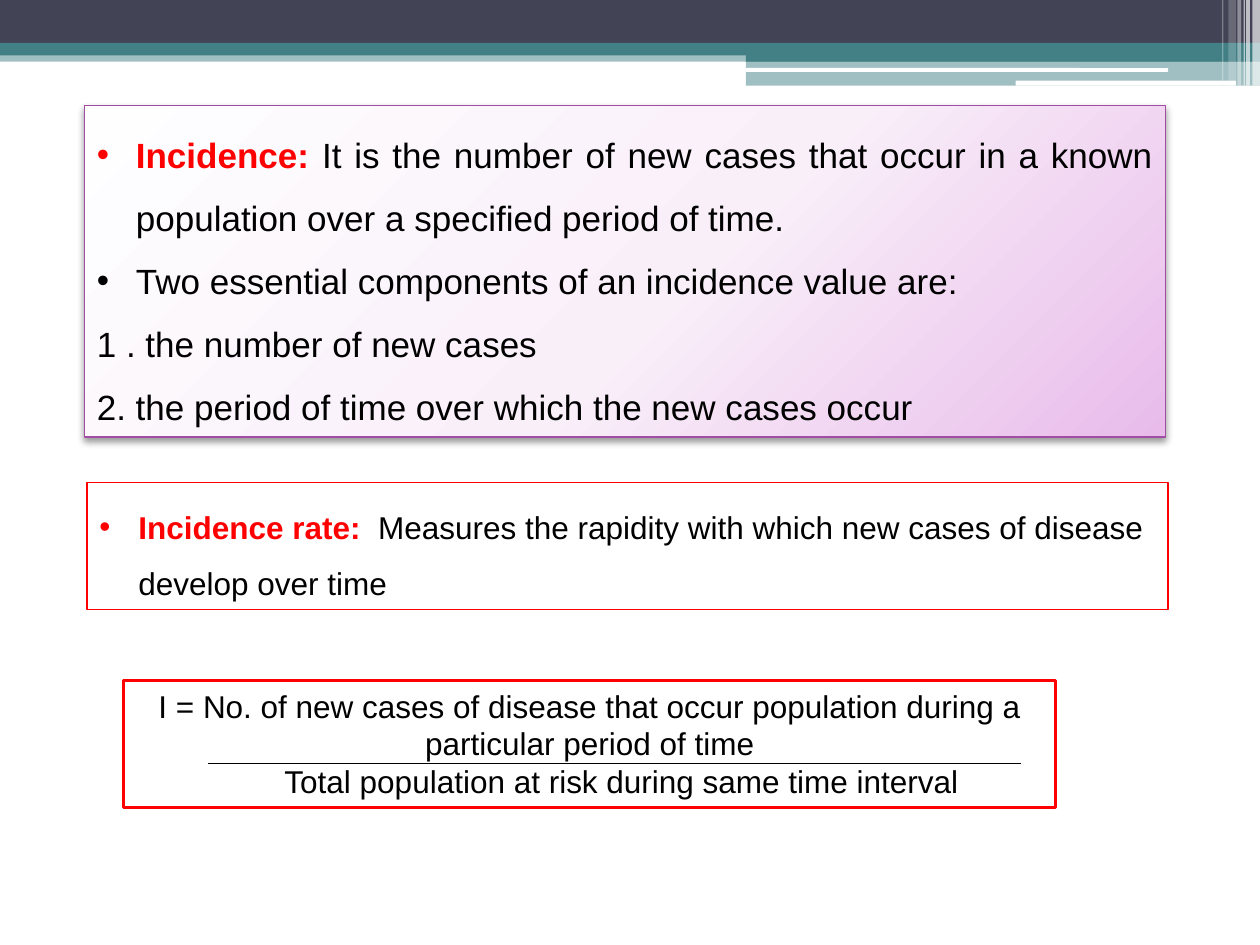
from dataclasses import dataclass

from lxml import etree
from pptx import Presentation
from pptx.dml.color import RGBColor
from pptx.enum.shapes import MSO_CONNECTOR, MSO_SHAPE
from pptx.enum.text import MSO_ANCHOR, MSO_AUTO_SIZE, PP_ALIGN
from pptx.oxml import parse_xml
from pptx.oxml.ns import qn
from pptx.util import Emu, Inches, Pt

RECTANGLE, ROUNDED = MSO_SHAPE.RECTANGLE, MSO_SHAPE.ROUNDED_RECTANGLE
LEFT, CENTER, JUSTIFY = PP_ALIGN.LEFT, PP_ALIGN.CENTER, PP_ALIGN.JUSTIFY
NAMESPACE = 'xmlns:a="http://schemas.openxmlformats.org/drawingml/2006/main"'


@dataclass(frozen=True)
class Theme:
    font: str = "Arial"
    large: int = 20
    medium: int = 18
    text: str = "000000"
    accent: str = "FF0000"
    white: str = "FFFFFF"
    navy: str = "424456"
    teal: str = "438086"
    purple: str = "A04DA3"
    gradient: tuple = ((0, "FEFEFF"), (55, "F9EFF9"), (100, "E8BBEA"))
    thin: float = 0.75
    thick: float = 1.5


THEME = Theme()


def color(value):
    return RGBColor.from_string(value)


def add_bar(slide, box, fill, opacity=100, kind=RECTANGLE):
    shape = slide.shapes.add_shape(kind, *map(Inches, box))
    shape.shadow.inherit = False
    shape.fill.solid()
    shape.fill.fore_color.rgb = color(fill)
    shape.line.fill.background()
    if opacity < 100:
        fill_color = shape.fill._xPr.find(qn("a:solidFill"))[0]
        etree.SubElement(fill_color, qn("a:alpha"), val=str(opacity * 1000))


def add_header(slide, left, top, width):
    """Bands across the top, a stepped tab and pale stripes at the right edge."""
    right = left + width
    tab_width = 4.08
    tab_left = right - tab_width
    add_bar(slide, (left, top + 0.4, width, 0.09), THEME.teal, 50)
    add_bar(slide, (left, top, width, 0.34), THEME.navy)
    add_bar(slide, (left, top + 0.34, width, 0.1), THEME.teal)
    add_bar(slide, (tab_left, top + 0.39, tab_width, 0.1), THEME.teal)
    add_bar(slide, (tab_left, top + 0.48, tab_width, 0.2), THEME.teal, 50)
    add_bar(slide, (tab_left, top + 0.54, 3.35, 0.03), THEME.white, kind=ROUNDED)
    add_bar(slide, (right - 1.94, top + 0.64, 1.75, 0.04), THEME.white, kind=ROUNDED)
    stripes = (
        (0.06, 0.06, 0.68, 65),
        (0.11, 0.03, 0.68, 65),
        (0.13, 0.01, 0.68, 60),
        (0.18, 0.03, 0.68, 40),
        (0.25, 0.06, 0.64, 20),
        (0.3, 0.01, 0.64, 30),
    )
    for offset, stripe_width, height, opacity in stripes:
        add_bar(slide, (right - offset, top, stripe_width, height), THEME.white, opacity)


def add_text_box(slide, box, line_color, line_width):
    shape = slide.shapes.add_textbox(*map(Inches, box))
    shape.line.color.rgb = color(line_color)
    shape.line.width = Pt(line_width)
    frame = shape.text_frame
    frame.word_wrap = True
    frame.auto_size = MSO_AUTO_SIZE.SHAPE_TO_FIT_TEXT
    frame.vertical_anchor = MSO_ANCHOR.TOP
    return shape


def set_indent(paragraph, margin, first_line=0):
    properties = paragraph._p.get_or_add_pPr()
    properties.set("marL", str(Inches(margin)))
    properties.set("indent", str(Inches(first_line)))
    return properties


def write_paragraphs(frame, entries, size, alignment=LEFT, spacing=1.0):
    """Each entry is (lead, text, bulleted); the lead is bold and accented."""
    for index, (lead, text, bulleted) in enumerate(entries):
        paragraph = frame.add_paragraph() if index else frame.paragraphs[0]
        if bulleted:
            properties = set_indent(paragraph, 0.31, -0.31)
            etree.SubElement(properties, qn("a:buFont"), typeface=THEME.font)
            etree.SubElement(properties, qn("a:buChar"), char="•")
        paragraph.alignment = alignment
        paragraph.line_spacing = spacing
        paragraph.font.name = THEME.font
        paragraph.font.size = Pt(size)
        for words, is_lead in ((lead, True), (text, False)):
            if words:
                run = paragraph.add_run()
                run.text = words
                run.font.bold = is_lead
                run.font.color.rgb = color(THEME.accent if is_lead else THEME.text)


def add_gradient_and_shadow(shape):
    stops = "".join(
        f'<a:gs pos="{position * 1000}"><a:srgbClr val="{value}"/></a:gs>'
        for position, value in THEME.gradient
    )
    gradient = parse_xml(
        f'<a:gradFill {NAMESPACE} rotWithShape="1"><a:gsLst>{stops}</a:gsLst>'
        '<a:path path="circle"><a:fillToRect l="-40000" t="-90000" '
        'r="140000" b="190000"/></a:path></a:gradFill>'
    )
    shadow = parse_xml(
        f'<a:effectLst {NAMESPACE}><a:outerShdw blurRad="{Pt(4.1)}" dist="{Pt(2)}" '
        'dir="5400000" rotWithShape="0"><a:srgbClr val="000000">'
        '<a:alpha val="40000"/></a:srgbClr></a:outerShdw></a:effectLst>'
    )
    shape.fill.background()
    properties = shape._element.spPr
    properties.replace(properties.find(qn("a:noFill")), gradient)
    properties.append(shadow)


def add_definition(slide, box):
    shape = add_text_box(slide, box, THEME.purple, THEME.thin)
    add_gradient_and_shadow(shape)
    entries = (
        ("Incidence: ", "It is the number of new cases that occur in a known "
         "population over a specified period of time.", True),
        ("", "Two essential components of an incidence value are:", True),
        ("", "1 . the number of new cases", False),
        ("", "2. the period of time over which the new cases occur", False),
    )
    write_paragraphs(shape.text_frame, entries, THEME.large, JUSTIFY, 1.5)


def add_rate(slide, box):
    shape = add_text_box(slide, box, THEME.accent, THEME.thin)
    entries = (
        ("Incidence rate:  ", "Measures the rapidity with which new cases of "
         "disease develop over time", True),
    )
    write_paragraphs(shape.text_frame, entries, THEME.medium, spacing=1.5)


def add_formula(slide, box):
    shape = add_text_box(slide, box, THEME.accent, THEME.thick)
    entries = (
        ("", "I = No. of new cases of disease that occur population during a "
         "particular period of time", False),
        ("", "Total population at risk during same time interval", False),
    )
    write_paragraphs(shape.text_frame, entries, THEME.medium, CENTER)
    denominator = shape.text_frame.paragraphs[1]
    denominator.alignment = LEFT
    set_indent(denominator, 1.18)

    left, top, width, _ = box
    height = Inches(top + 0.66)
    fraction_bar = slide.shapes.add_connector(
        MSO_CONNECTOR.STRAIGHT,
        Inches(left + 0.67), height, Inches(left + width - 0.28), Emu(height),
    )
    fraction_bar.line.color.rgb = color(THEME.text)
    fraction_bar.line.width = Pt(THEME.thin)
    etree.SubElement(fraction_bar._element.spPr, qn("a:effectLst"))


def main():
    presentation = Presentation()
    presentation.slide_width = Inches(10)
    presentation.slide_height = Inches(7.5)
    slide = presentation.slides.add_slide(presentation.slide_layouts[6])
    add_header(slide, 0, 0, 10)
    add_definition(slide, (0.67, 0.84, 8.58, 2.63))
    add_rate(slide, (0.69, 3.83, 8.58, 1.01))
    add_formula(slide, (0.98, 5.4, 7.4, 1.01))
    presentation.save("out.pptx")


if __name__ == "__main__":
    main()
